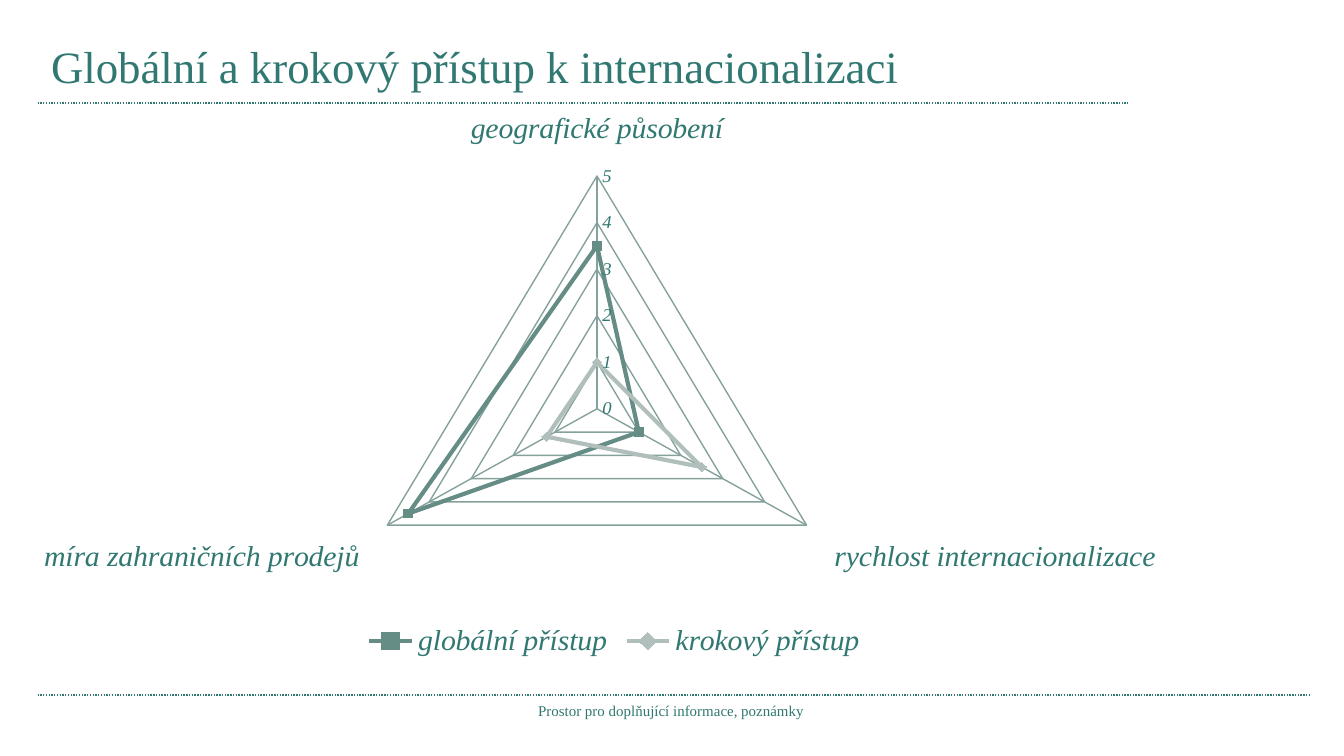
import lxml.etree
import pptx
import pptx.chart.data
import pptx.dml.color
import pptx.enum.chart
import pptx.enum.dml
import pptx.enum.shapes
import pptx.enum.text
import pptx.oxml.ns
import pptx.util
from pptx.util import Cm

COLORS = {"teal": "307871", "global": "658D86", "stepwise": "B0BFBB", "grid": "85A19B"}
FONT = "Times New Roman"
LEFT = 0.71
TITLE_RIGHT = 21.31

CATEGORIES = ["geografické působení", "rychlost internacionalizace",
              "míra zahraničních prodejů"]
MARKERS = pptx.enum.chart.XL_MARKER_STYLE
SERIES = [
    ("globální přístup", (3.5, 1, 4.5), "global", MARKERS.SQUARE),
    ("krokový přístup", (1, 2.5, 1.2), "stepwise", MARKERS.DIAMOND),
]
PLOT_LAYOUT = {"x": 0.27, "y": 0.08, "w": 0.43, "h": 0.88}


def color(name):
    return pptx.dml.color.RGBColor.from_string(COLORS[name])


def add_element(parent, tag, **attributes):
    return lxml.etree.SubElement(parent, pptx.oxml.ns.qn(tag), **attributes)


class SlideBuilder:
    """Keeps the common style and the slide being filled."""

    def __init__(self, deck):
        self.page = deck.slides.add_slide(deck.slide_layouts[5])

    def style_font(self, font, size, italic=None):
        font.name = FONT
        font.size = pptx.util.Pt(size)
        font.italic = italic
        font.color.rgb = color("teal")

    def style_line(self, line, name, width):
        line.color.rgb = color(name)
        line.width = pptx.util.Pt(width)

    def fill_text(self, box, text, size, align):
        frame = box.text_frame
        frame.word_wrap = True
        frame.vertical_anchor = pptx.enum.text.MSO_ANCHOR.MIDDLE
        para = frame.paragraphs[0]
        para.text = text
        para.alignment = align
        self.style_font(para.font, size)

    def title(self, text, left, top, width, height):
        box = self.page.shapes.title
        box.left, box.top, box.width, box.height = map(Cm, (left, top, width, height))
        self.fill_text(box, text, 24, pptx.enum.text.PP_ALIGN.LEFT)

    def note(self, text, left, top, width, height):
        box = self.page.shapes.add_textbox(*map(Cm, (left, top, width, height)))
        self.fill_text(box, text, 8, pptx.enum.text.PP_ALIGN.CENTER)

    def rule(self, left, right, top):
        """Draw a dotted horizontal line."""
        line = self.page.shapes.add_connector(
            pptx.enum.shapes.MSO_CONNECTOR.STRAIGHT, Cm(left), Cm(top), Cm(right), Cm(top))
        self.style_line(line.line, "teal", 0.75)
        line.line.dash_style = pptx.enum.dml.MSO_LINE.ROUND_DOT
        add_element(line.element.spPr, "a:effectLst")

    def radar(self, left, top, width, height):
        data = pptx.chart.data.CategoryChartData()
        data.categories = CATEGORIES
        for name, values, _, _ in SERIES:
            data.add_series(name, values)
        chart = self.page.shapes.add_chart(
            pptx.enum.chart.XL_CHART_TYPE.RADAR_MARKERS,
            *map(Cm, (left, top, width, height)), data).chart
        chart.has_title = False
        self.style_font(chart.font, 10, True)
        chart.plots[0].vary_by_categories = False
        self.style_axes(chart)

        for series, (_, _, name, marker) in zip(chart.plots[0].series, SERIES):
            self.style_line(series.format.line, name, 2.25)
            series.marker.style = marker
            series.marker.size = 5
            series.marker.format.fill.solid()
            series.marker.format.fill.fore_color.rgb = color(name)
            series.marker.format.line.color.rgb = color(name)

        chart.has_legend = True
        chart.legend.position = pptx.enum.chart.XL_LEGEND_POSITION.BOTTOM
        chart.legend.include_in_layout = False
        self.style_font(chart.legend.font, 16, True)
        self.place_plot(chart)

    def style_axes(self, chart):
        ticks = pptx.enum.chart.XL_TICK_MARK
        value_axis = chart.value_axis
        value_axis.minimum_scale, value_axis.maximum_scale = 0, 5
        value_axis.major_unit = 1
        for axis, size, tick in ((chart.category_axis, 16, ticks.OUTSIDE),
                                 (value_axis, 10, ticks.NONE)):
            axis.has_major_gridlines = True
            axis.major_tick_mark = tick
            axis.minor_tick_mark = ticks.NONE
            self.style_line(axis.major_gridlines.format.line, "grid", 0.75)
            self.style_line(axis.format.line, "grid", 0.75)
            self.style_font(axis.tick_labels.font, size, True)

    def place_plot(self, chart):
        """Fix the inner plot area as fractions of the chart."""
        area = chart.element.xpath(".//c:plotArea")[0]
        for old in area.xpath("./c:layout"):
            area.remove(old)
        layout = add_element(area, "c:layout")
        area.insert(0, layout)
        manual = add_element(layout, "c:manualLayout")
        add_element(manual, "c:layoutTarget", val="inner")
        for side in "xy":
            add_element(manual, f"c:{side}Mode", val="edge")
        for key, value in PLOT_LAYOUT.items():
            add_element(manual, f"c:{key}", val=str(value))


def main():
    deck = pptx.Presentation()
    deck.slide_width, deck.slide_height = Cm(25.4), Cm(14.29)
    builder = SlideBuilder(deck)
    builder.rule(LEFT, TITLE_RIGHT, 1.95)
    builder.rule(LEFT, 24.77, 13.14)
    builder.note("Prostor pro doplňující informace, poznámky", 7.49, 13.14, 10.39, 0.6)
    builder.title("Globální a krokový přístup k internacionalizaci",
                  LEFT, 0.53, TITLE_RIGHT - LEFT, 1.42)
    builder.radar(LEFT, 2.13, 21.8, 10.4)
    deck.save("out.pptx")


if __name__ == "__main__":
    main()
